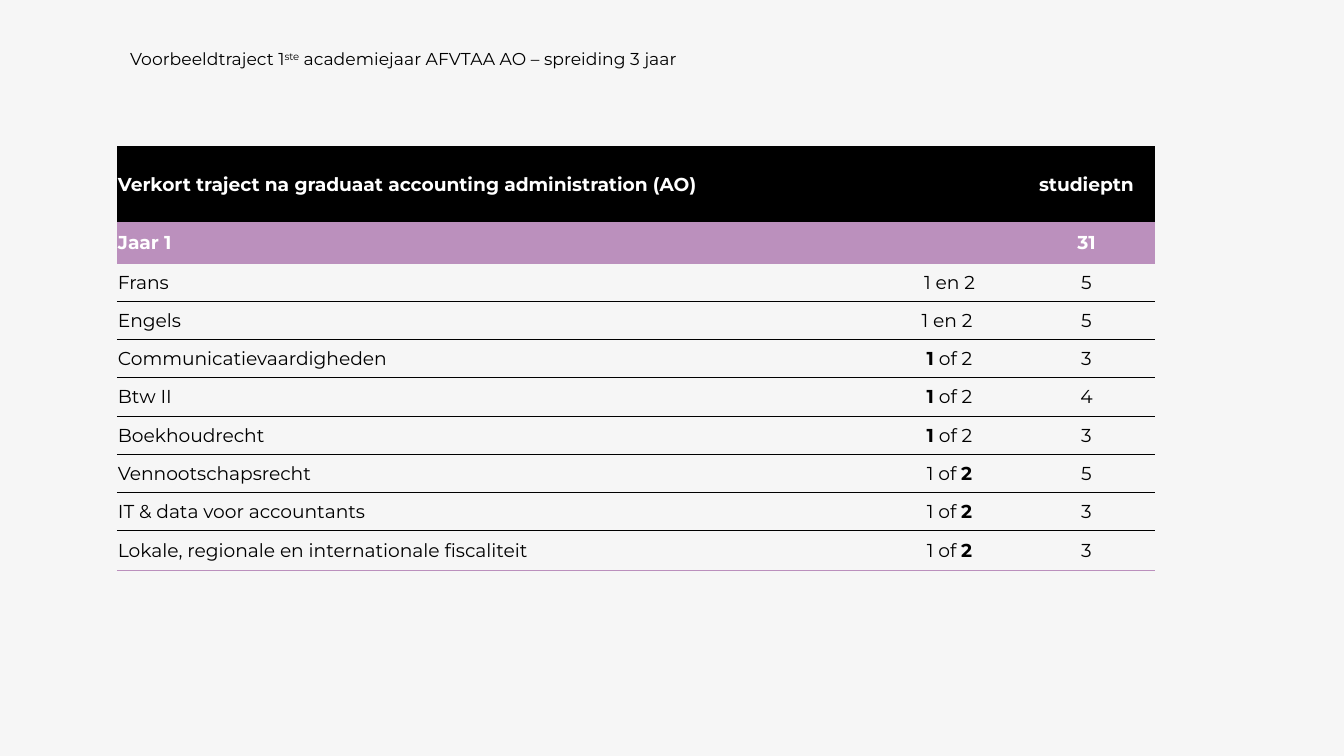
from lxml import etree
from pptx import Presentation
from pptx import util as u
from pptx.dml.color import RGBColor
from pptx.enum import text
from pptx.oxml import ns

PX_PER_INCH = 134.4
FONT = "Montserrat"
COLORS = {"page": "F6F6F6", "ink": "000000", "light": "FFFFFF", "mauve": "BB90BD"}
NO_GRID_STYLE = "{2D5ABB26-0587-4C30-8999-92F81FD0307C}"

HEADER = ("Verkort traject na graduaat accounting administration (AO)", "", "studieptn")
YEAR = ("Jaar 1", "", "31")
# Asterisks enclose the bold part
COURSES = [
    ("Frans", "1 en 2", "5"),
    ("Engels", "1 en 2 ", "5"),
    ("Communicatievaardigheden", "*1* of 2", "3"),
    ("Btw II", "*1* of 2", "4"),
    ("Boekhoudrecht", "*1* of 2", "3"),
    ("Vennootschapsrecht", "1 of *2*", "5"),
    ("IT & data voor accountants", "1 of *2*", "3"),
    ("Lokale, regionale en internationale fiscaliteit", "1 of *2*", "3"),
]


def px(n):
    return u.Emu(round(n * u.Inches(1) / PX_PER_INCH))


def rgb(name):
    return RGBColor.from_string(COLORS[name])


def add_run(paragraph, words, size, color, bold=False):
    run = paragraph.add_run()
    run.text = words
    run.font.name = FONT
    run.font.size = u.Pt(size)
    run.font.bold = bold
    run.font.color.rgb = rgb(color)
    return run


def add_title(slide):
    frame = slide.shapes.add_textbox(px(117), px(42), px(605), px(47)).text_frame
    frame.word_wrap = True
    line = frame.paragraphs[0]
    add_run(line, "Voorbeeldtraject 1", 9.2, "ink")
    ordinal = add_run(line, "ste", 9.2, "ink")
    ordinal.font._element.set("baseline", "30000")
    add_run(line, " academiejaar AFVTAA AO – spreiding 3 jaar", 9.2, "ink")


def set_border(cell, side, color, points):
    """Draw one edge of a cell; side is "T" or "B", added in that order."""
    props = cell._tc.get_or_add_tcPr()
    edge = etree.Element(ns.qn(f"a:ln{side}"), w=str(u.Pt(points)))
    fill = etree.SubElement(edge, ns.qn("a:solidFill"))
    etree.SubElement(fill, ns.qn("a:srgbClr"), val=COLORS[color])
    lines_before = [child for child in props if child.tag == ns.qn("a:lnT")]
    props.insert(len(lines_before), edge)


def fill_cell(cell, words, centred, color, bold, background):
    cell.margin_left = cell.margin_right = cell.margin_top = px(1)
    cell.margin_bottom = 0
    cell.vertical_anchor = text.MSO_ANCHOR.MIDDLE
    paragraph = cell.text_frame.paragraphs[0]
    if centred:
        paragraph.alignment = text.PP_ALIGN.CENTER
    for i, part in enumerate(words.split("*")):
        if part:
            add_run(paragraph, part, 10, color, bold or i % 2 == 1)
    if not words:
        etree.SubElement(paragraph._p, ns.qn("a:endParaRPr"), sz="1000")
    if background:
        cell.fill.solid()
        cell.fill.fore_color.rgb = rgb(background)
    else:
        cell.fill.background()


def add_course_table(slide):
    rows = [HEADER, YEAR, *COURSES]
    last = len(rows) - 1
    table = slide.shapes.add_table(
        len(rows), 3, px(117), px(146), px(1038), px(425)).table
    table.first_row = table.horz_banding = False
    table._tbl.tblPr.find(ns.qn("a:tableStyleId")).text = NO_GRID_STYLE
    for column, width in zip(table.columns, (764, 137, 137)):
        column.width = px(width)
    course_height = px(268) // (len(COURSES) - 1)
    heights = [px(76), px(41)] + [course_height] * (len(COURSES) - 1) + [px(40)]

    for r, row in enumerate(rows):
        table.rows[r].height = heights[r]
        background = {0: "ink", 1: "mauve"}.get(r)
        for c, words in enumerate(row):
            cell = table.cell(r, c)
            fill_cell(cell, words, c > 0, "light" if background else "ink",
                      background is not None, background)
            if r > 1:
                set_border(cell, "T", *(("mauve", 1) if r == 2 else ("ink", 0.5)))
            if r > 0:
                set_border(cell, "B", *(("mauve", 1) if r in (1, last) else ("ink", 0.5)))


def main():
    deck = Presentation()
    deck.slide_width, deck.slide_height = px(1344), px(756)
    slide = deck.slides.add_slide(deck.slide_layouts[6])
    slide.background.fill.solid()
    slide.background.fill.fore_color.rgb = rgb("page")
    add_title(slide)
    add_course_table(slide)
    deck.save("out.pptx")


if __name__ == "__main__":
    main()
